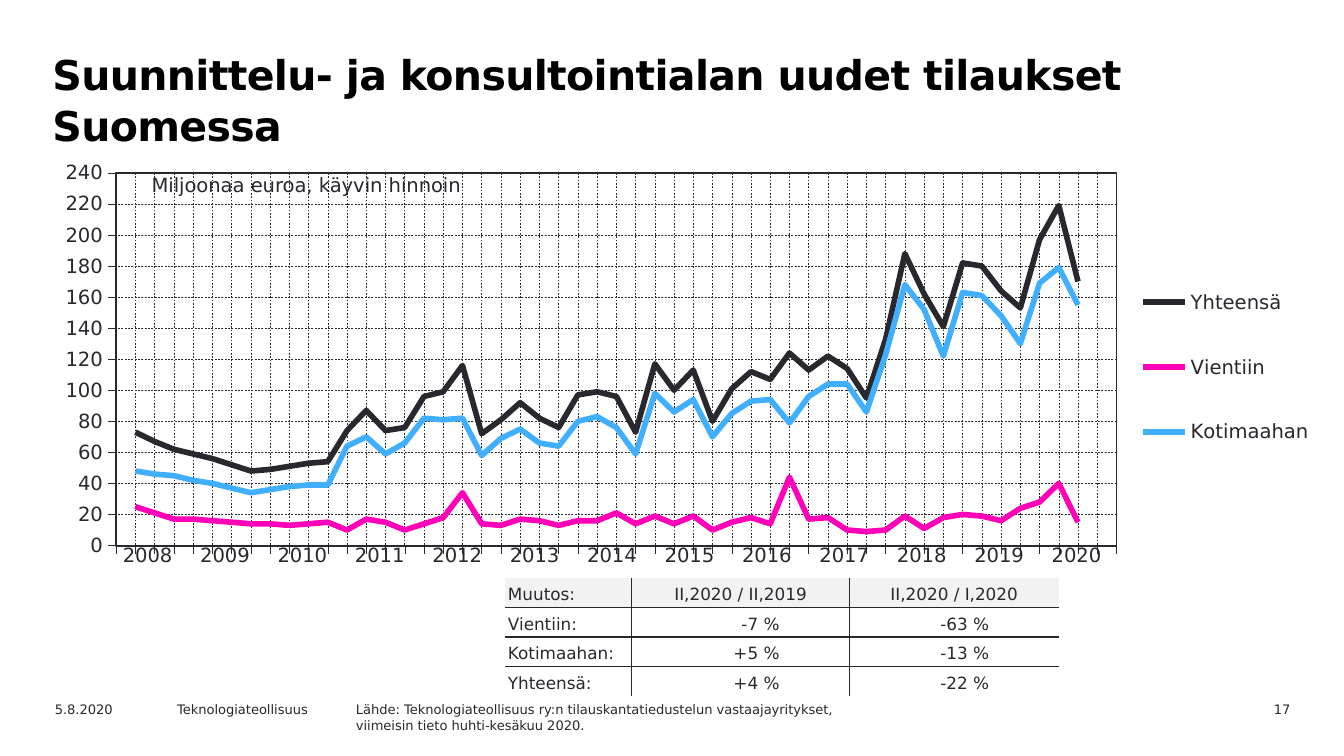
"""Builds the slide on new orders in the design and consulting sector."""
from lxml import etree
from pptx import Presentation, util as u
from pptx.chart.data import CategoryChartData
from pptx.dml.color import RGBColor
from pptx.enum import chart as ch, dml, text
from pptx.oxml import parse_xml
from pptx.oxml.ns import nsdecls, qn

INK, FONT = "29282E", "DejaVu Sans"
NO_STYLE = "{2D5ABB26-0587-4C30-8999-92F81FD0307C}"
LEFT, CENTER, RIGHT = text.PP_ALIGN.LEFT, text.PP_ALIGN.CENTER, text.PP_ALIGN.RIGHT


def paint(target, color, width=None):
    """Colours a font, fill or line, and sets a line's width."""
    if width is not None:
        target.width = u.Pt(width)
        target = target.fill
    if hasattr(target, "solid"):
        target.solid()
        target.fore_color.rgb = RGBColor.from_string(color)
    else:
        target.color.rgb = RGBColor.from_string(color)


def write(tf, words, size=10.5, color=INK, bold=False, align=LEFT, leading=None, spacing=None):
    """Fills a text frame with one paragraph per line of words."""
    for i, line in enumerate(words.split("\n")):
        p = tf.paragraphs[0] if i == 0 else tf.add_paragraph()
        p.alignment = align
        if leading:
            p.line_spacing = u.Pt(leading)
        r = p.add_run()
        r.text = line
        r.font.name, r.font.size, r.font.bold = FONT, u.Pt(size), bold
        paint(r.font, color)
        if spacing:
            r.font._element.set("spc", str(spacing))


prs = Presentation()
prs.slide_width = u.Inches(10)
prs.slide_height = prs.slide_width * 9 // 16
col = row = prs.slide_width // 1000
s = prs.slides.add_slide(prs.slide_layouts[5])

title = s.shapes.title
title.left, title.top, title.width, title.height = 39 * col, 36 * row, 854 * col, 66 * row
tf = title.text_frame
tf.margin_left = tf.margin_right = tf.margin_top = tf.margin_bottom = 0
tf.vertical_anchor = text.MSO_ANCHOR.TOP
tf.auto_size = text.MSO_AUTO_SIZE.NONE
tf.word_wrap = True
write(tf, "Suunnittelu- ja konsultointialan uudet tilaukset Suomessa",
      size=22, color="000000", bold=True, leading=27, spacing=-34)

orders = {
    "Yhteensä": (INK, [
        73, 67, 62, 59, 56, 52, 48, 49, 51, 53, 54, 74, 87, 74, 76, 96, 99, 116, 72, 81, 92, 82, 76, 97, 99,
        96, 73, 117, 100, 113, 80, 101, 112, 107, 124, 113, 122, 114, 95, 133, 188, 162, 141, 182, 180, 164,
        153, 197, 219, 170]),
    "Vientiin": ("FF00B8", [
        25, 21, 17, 17, 16, 15, 14, 14, 13, 14, 15, 10, 17, 15, 10, 14, 18, 34, 14, 13, 17, 16, 13, 16, 16,
        21, 14, 19, 14, 19, 10, 15, 18, 14, 44, 17, 18, 10, 9, 10, 19, 11, 18, 20, 19, 16, 24, 28, 40, 15]),
    "Kotimaahan": ("40AFFF", [
        48, 46, 45, 42, 40, 37, 34, 36, 38, 39, 39, 64, 70, 59, 66, 82, 81, 82, 58, 69, 75, 66, 64, 80, 83,
        76, 59, 98, 86, 94, 70, 85, 93, 94, 79, 96, 104, 104, 86, 123, 168, 152, 122, 163, 161, 148, 130,
        169, 179, 155]),
}
data = CategoryChartData()
data.categories = [str(n) for n in range(1, 54)]
for name, (color, values) in orders.items():
    data.add_series(name, [None, *values, None, None])
chart = s.shapes.add_chart(ch.XL_CHART_TYPE.LINE, 41 * col, 115 * row, 947 * col, 333 * row, data).chart
chart.has_title = False
chart.font.name, chart.font.size, chart.font.bold = FONT, u.Pt(10.5), False
paint(chart.font, INK)
chart.plots[0].vary_by_categories = False
for series, (color, values) in zip(chart.plots[0].series, orders.values()):
    series.smooth = False
    series.marker.style = ch.XL_MARKER_STYLE.NONE
    paint(series.format.line, color, 3)

for axis in (chart.category_axis, chart.value_axis):
    axis.has_major_gridlines = True
    axis.major_tick_mark = ch.XL_TICK_MARK.OUTSIDE
    axis.minor_tick_mark = ch.XL_TICK_MARK.NONE
    paint(axis.format.line, INK, 0.22)
    paint(axis.major_gridlines.format.line, INK, 0.25)
    axis.major_gridlines.format.line.dash_style = dml.MSO_LINE.DASH
chart.category_axis.tick_label_position = ch.XL_TICK_LABEL_POSITION.NONE
axis = chart.value_axis
axis.minimum_scale, axis.maximum_scale, axis.major_unit = 0, 240, 20
axis.tick_labels.number_format = "#,##0"
axis.tick_labels.number_format_is_linked = False
for old in axis._element.findall(qn("c:crossBetween")):
    axis._element.remove(old)
axis._element.find(qn("c:crosses")).addnext(
    parse_xml(f'<c:crossBetween {nsdecls("c")} val="midCat"/>'))

chart.has_legend = True
chart.legend.position = ch.XL_LEGEND_POSITION.RIGHT
chart.legend.include_in_layout = False
plot_area = chart._chartSpace.chart.plotArea
for parent, index, target, box in (
        (plot_area, 0, '<c:layoutTarget val="inner"/>', (0.048, 0.041, 0.786, 0.833)),
        (chart.legend._element, 1, "", (0.85, 0.21, 0.14, 0.53))):
    for old in parent.findall(qn("c:layout")):
        parent.remove(old)
    modes = "".join(f'<c:{k}Mode val="edge"/>' for k in "xy")
    sizes = "".join(f'<c:{k} val="{v}"/>' for k, v in zip("xywh", box))
    parent.insert(index, parse_xml(
        f'<c:layout {nsdecls("c")}><c:manualLayout>{target}{modes}{sizes}</c:manualLayout></c:layout>'))
plot_area.append(parse_xml(
    f'<c:spPr {nsdecls("c", "a")}><a:noFill/><a:ln w="12700"><a:solidFill>'
    f'<a:srgbClr val="{INK}"/></a:solidFill></a:ln></c:spPr>'))

for box, words, size, align in (
        ((103, 124, 260, 27), "Miljoonaa euroa, käyvin hinnoin", 10.5, LEFT),
        ((31, 517, 100, 18), "5.8.2020", 7, LEFT),
        ((122, 517, 142, 18), "Teknologiateollisuus", 7, LEFT),
        ((255, 517, 507, 18), "Lähde: Teknologiateollisuus ry:n tilauskantatiedustelun vastaajayritykset,\n"
                              "viimeisin tieto huhti-kesäkuu 2020.", 7, LEFT),
        ((876, 517, 94, 18), "17", 7, RIGHT)):
    tf = s.shapes.add_textbox(*(n * col for n in box)).text_frame
    tf.word_wrap = True
    write(tf, words, size=size, align=align)

changes = [("Muutos:", "II,2020 / II,2019", "II,2020 / I,2020"),
           ("Vientiin:", "-7 %", "-63 %"),
           ("Kotimaahan:", "+5 %", "-13 %"),
           ("Yhteensä:", "+4 %", "-22 %")]
years = [tuple(str(year) for year in range(2008, 2021))]
for rows, left, top, widths, height in (
        (changes, 376, 430, (94, 162, 156), 22),
        (years, 81, 400, (57.6,) * 13, 31)):
    table = s.shapes.add_table(len(rows), len(widths), left * col, top * row,
                               int(sum(widths) * col), len(rows) * height * row).table
    table.first_row = table.horz_banding = False
    table._tbl.tblPr.find(qn("a:tableStyleId")).text = NO_STYLE
    for column, width in zip(table.columns, widths):
        column.width = int(width * col)
    for i, words in enumerate(rows):
        table.rows[i].height = height * row
        for j, word in enumerate(words):
            cell = table.cell(i, j)
            if rows is years:
                cell.fill.background()
                write(cell.text_frame, word, align=CENTER)
                continue
            figure = i > 0 and j > 0
            cell.vertical_anchor = text.MSO_ANCHOR.BOTTOM
            cell.margin_left = cell.margin_top = cell.margin_bottom = 2 * col
            cell.margin_right = (52 if figure else 2) * col
            tcPr = cell._tc.get_or_add_tcPr()
            for side, inner in (("L", j > 0), ("R", j < 2), ("T", i > 0), ("B", i < 3)):
                if inner:
                    ln = etree.SubElement(tcPr, qn("a:ln" + side), w="12700")
                    etree.SubElement(etree.SubElement(ln, qn("a:solidFill")), qn("a:srgbClr"), val=INK)
            paint(cell.fill, "FFFFFF" if i else "F2F2F2")
            write(cell.text_frame, word, size=9, align=RIGHT if figure else CENTER if j else LEFT)

prs.save("out.pptx")
